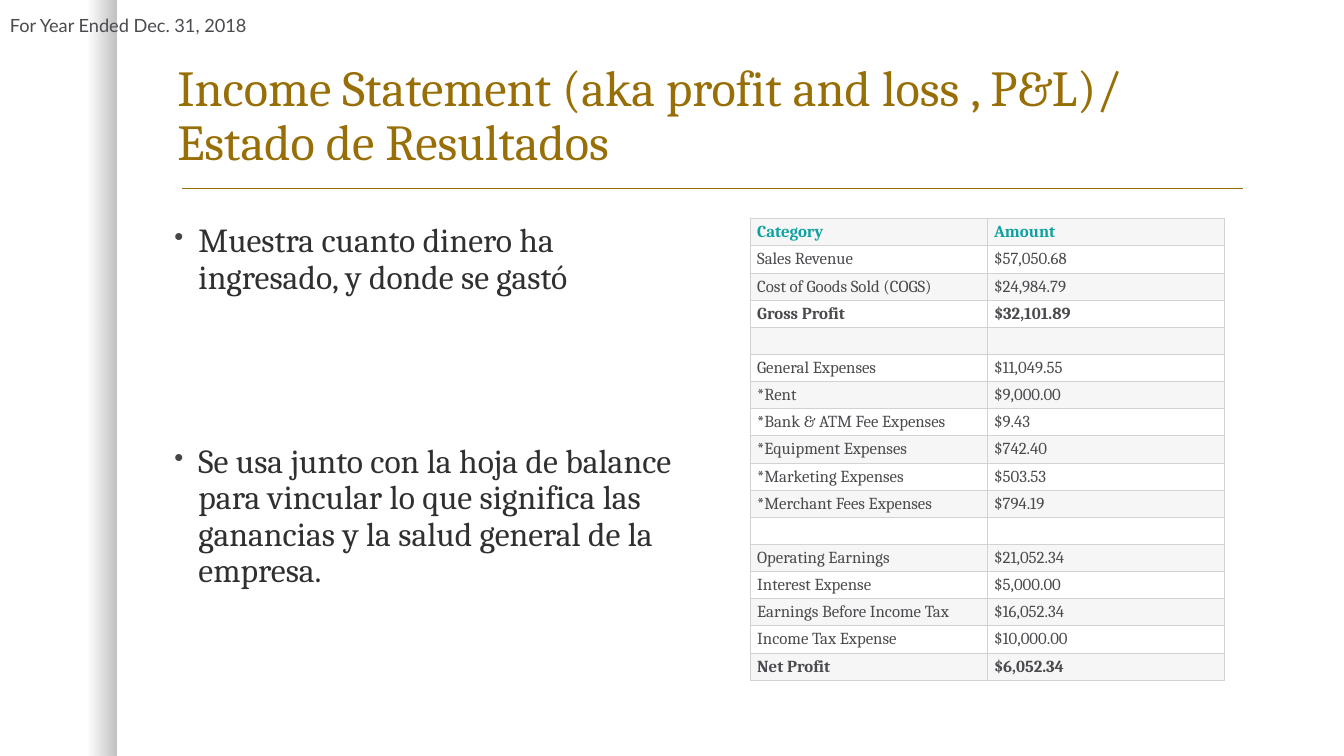
from dataclasses import dataclass

from lxml.etree import SubElement
from pptx import Presentation
from pptx.dml.color import RGBColor
from pptx.enum.shapes import MSO_CONNECTOR, MSO_SHAPE
from pptx.enum.text import MSO_ANCHOR
from pptx.oxml.ns import qn
from pptx.util import Inches, Pt

RECT = MSO_SHAPE.RECTANGLE
LINE = MSO_CONNECTOR.STRAIGHT
TOP, MIDDLE, BOTTOM = MSO_ANCHOR.TOP, MSO_ANCHOR.MIDDLE, MSO_ANCHOR.BOTTOM
GOLD, INK, GRAY, TEAL = "986F07", "303030", "4A4B4E", "0FA1A2"
DOT, EDGE = "454545", "D4D2CE"
BANDS = ("F6F6F6", "FFFFFF")
PAD = {"margin_left": 0.07, "margin_right": 0.07, "margin_top": 0.03, "margin_bottom": 0.03}
COL, ROW = 2.35, 4.58 / 17


@dataclass
class Para:
    text: str
    before: float = 0


@dataclass
class Block:
    box: tuple[float, float, float, float]
    paras: list[Para]
    size: float
    color: str
    font: str = "Cambria"
    anchor: int = TOP
    space: float = 0.9
    dots: bool = False


@dataclass
class Row:
    label: str = ""
    amount: str = ""
    bold: bool = False
    color: str = GRAY


BLOCKS = [
    Block((1.66, 0.42, 10.75, 1.33),
          [Para("Income Statement (aka profit and loss , P&L)/ Estado de Resultados")],
          36, GOLD, anchor=BOTTOM),
    Block((1.63, 2.17, 5.25, 4.58),
          [Para("Muestra cuanto dinero ha ingresado, y donde se gastó"),
           Para("Se usa junto con la hoja de balance para vincular lo que significa "
                "las ganancias y la salud general de la empresa.", 106)],
          24, INK, dots=True),
    Block((0, 0, 13.33, 0.5), [Para("For Year Ended Dec. 31, 2018")],
          13, GRAY, font="Lato", anchor=MIDDLE, space=1),
]

ROWS = [
    Row("Category", "Amount", True, TEAL),
    Row("Sales Revenue", "$57,050.68"),
    Row("Cost of Goods Sold (COGS)", "$24,984.79"),
    Row("Gross Profit", "$32,101.89", True),
    Row(),
    Row("General Expenses", "$11,049.55"),
    Row("*Rent", "$9,000.00"),
    Row("*Bank & ATM Fee Expenses", "$9.43"),
    Row("*Equipment Expenses", "$742.40"),
    Row("*Marketing Expenses", "$503.53"),
    Row("*Merchant Fees Expenses", "$794.19"),
    Row(),
    Row("Operating Earnings", "$21,052.34"),
    Row("Interest Expense", "$5,000.00"),
    Row("Earnings Before Income Tax", "$16,052.34"),
    Row("Income Tax Expense", "$10,000.00"),
    Row("Net Profit", "$6,052.34", True),
]


def rgb(code: str) -> RGBColor:
    return RGBColor.from_string(code)


def write(para, text: str, color: str, **style) -> None:
    run = para.add_run()
    run.text = text
    for key, value in style.items():
        setattr(run.font, key, value)
    run.font.color.rgb = rgb(color)


def add_dot(para) -> None:
    props = para._p.get_or_add_pPr()
    props.set("marL", str(Inches(0.24)))
    props.set("indent", str(Inches(-0.24)))
    tint = SubElement(props, qn("a:buClr"))
    SubElement(tint, qn("a:srgbClr"), val=DOT)
    SubElement(props, qn("a:buSzPct"), val="80000")
    SubElement(props, qn("a:buChar"), char="•")


def add_block(slide, block: Block) -> None:
    frame = slide.shapes.add_textbox(*map(Inches, block.box)).text_frame
    frame.word_wrap = True
    frame.vertical_anchor = block.anchor
    for i, item in enumerate(block.paras):
        para = frame.add_paragraph() if i else frame.paragraphs[0]
        if block.dots:
            add_dot(para)
        para.line_spacing = block.space
        if item.before:
            para.space_before = Pt(item.before)
        write(para, item.text, block.color, size=Pt(block.size), name=block.font)


def add_shade(slide) -> None:
    shade = slide.shapes.add_shape(RECT, 0, 0, Inches(1.16), Inches(7.5))
    shade.shadow.inherit = False
    shade.line.fill.background()
    shade.fill.gradient()
    shade.fill.gradient_angle = 0
    for stop, spot in zip(shade.fill.gradient_stops, (0.75, 1)):
        stop.position = spot
        stop.color.rgb = rgb("000000")
    tints = shade._element.spPr.iter(qn("a:srgbClr"))
    for tint, alpha in zip(list(tints), ("0", "25000")):
        SubElement(tint, qn("a:alpha"), val=alpha)


def add_rule(slide) -> None:
    rule = slide.shapes.add_connector(LINE, *map(Inches, (1.81, 1.87, 12.33, 1.87)))
    rule.line.color.rgb = rgb(GOLD)
    rule.line.width = Pt(1)
    SubElement(rule._element.spPr, qn("a:effectLst"))


def fill_cell(cell, text: str, row: Row, band: str) -> None:
    for key, value in PAD.items():
        setattr(cell, key, Inches(value))
    cell.vertical_anchor = MIDDLE
    props = cell._tc.get_or_add_tcPr()
    for side in ("lnL", "lnR", "lnT", "lnB"):
        edge = SubElement(props, qn(f"a:{side}"), w=str(Pt(0.75)))
        SubElement(SubElement(edge, qn("a:solidFill")), qn("a:srgbClr"), val=EDGE)
    cell.fill.solid()
    cell.fill.fore_color.rgb = rgb(band)
    para = cell.text_frame.paragraphs[0]
    if text:
        write(para, text, row.color, size=Pt(12), name="Cambria", bold=row.bold)
    else:
        SubElement(para._p, qn("a:endParaRPr"), sz="1200")


def add_grid(slide) -> None:
    box = map(Inches, (7.44, 2.17, 2 * COL, ROW * len(ROWS)))
    grid = slide.shapes.add_table(len(ROWS), 2, *box).table
    grid.first_row = grid.horz_banding = False
    for col in grid.columns:
        col.width = Inches(COL)
    for r, row in enumerate(ROWS):
        grid.rows[r].height = Inches(ROW)
        for c, text in enumerate((row.label, row.amount)):
            fill_cell(grid.cell(r, c), text, row, BANDS[r % 2])


def main() -> None:
    deck = Presentation()
    deck.slide_width, deck.slide_height = Inches(13.33), Inches(7.5)
    slide = deck.slides.add_slide(deck.slide_layouts[6])
    add_shade(slide)
    add_rule(slide)
    title, body, date = BLOCKS
    add_block(slide, title)
    add_block(slide, body)
    add_grid(slide)
    add_block(slide, date)
    deck.save("out.pptx")


if __name__ == "__main__":
    main()
